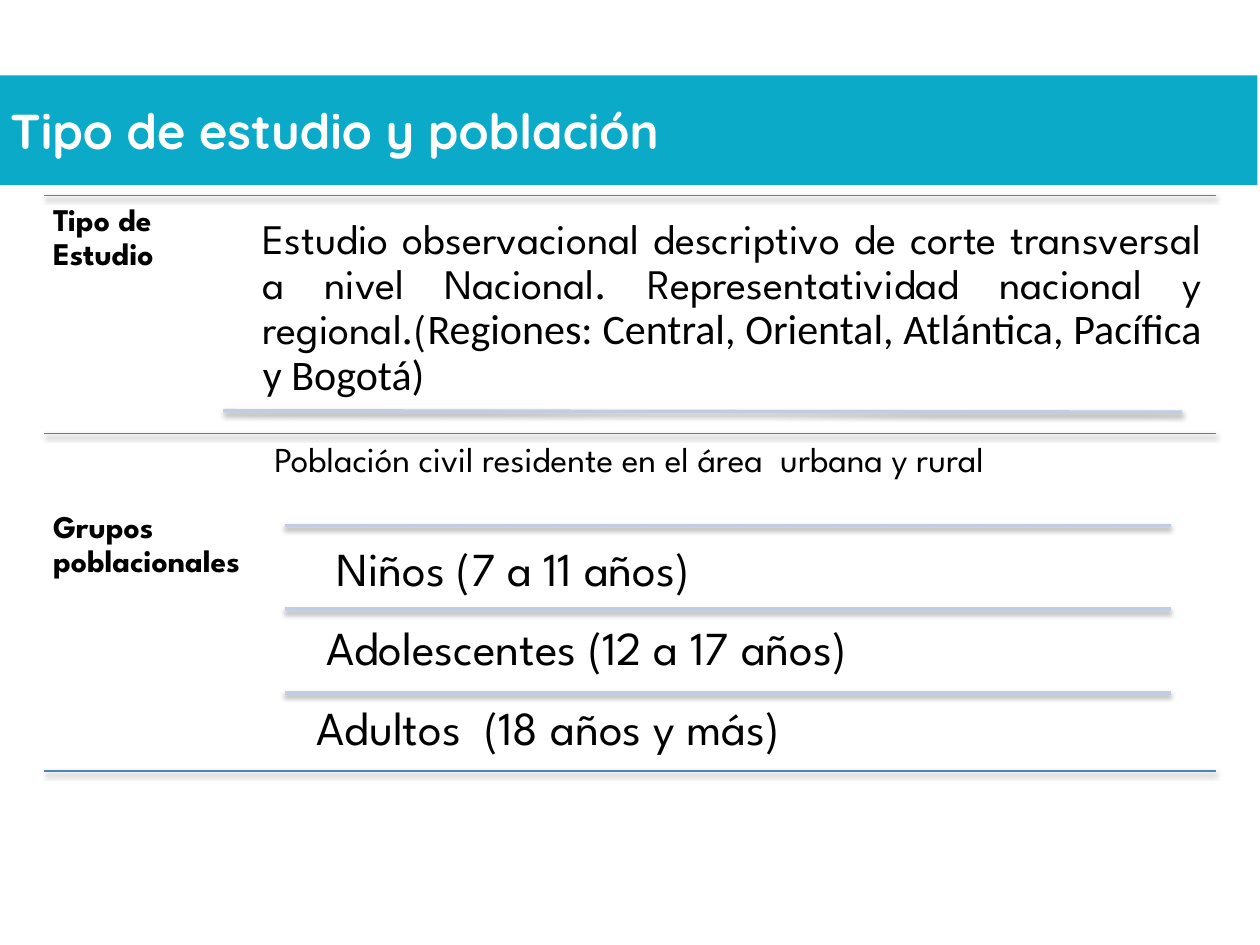
from dataclasses import dataclass

from lxml import etree
from pptx import Presentation
from pptx import util as u
from pptx.dml.color import RGBColor
from pptx.enum import shapes, text
from pptx.oxml.ns import qn


@dataclass(frozen=True)
class Theme:
    band: str = "0AAAC8"
    white: str = "FFFFFF"
    ink: str = "000000"
    blue: str = "4F81BD"
    pale: str = "C2CDE1"
    head: str = "Quicksand"
    body: str = "League Spartan"
    alt: str = "Calibri"
    title: int = 28
    label: int = 18
    study: int = 24
    note: int = 20
    group: int = 27


class Page:
    def __init__(self, deck, theme):
        self.theme = theme
        self.slide = deck.slides.add_slide(deck.slide_layouts[5])

    def run(self, para, words, font, size, color, bold=False):
        run = para.add_run()
        run.text = words
        run.font.name = font
        run.font.size = u.Pt(size)
        run.font.bold = bold
        run.font.color.rgb = RGBColor.from_string(color)

    def title(self, words, box):
        t = self.theme
        shape = self.slide.shapes.title
        shape.left, shape.top, shape.width, shape.height = map(u.Cm, box)
        shape.fill.solid()
        shape.fill.fore_color.rgb = RGBColor.from_string(t.band)
        frame = shape.text_frame
        frame.auto_size = text.MSO_AUTO_SIZE.NONE
        frame.vertical_anchor = text.MSO_ANCHOR.MIDDLE
        para = frame.paragraphs[0]
        para.alignment = text.PP_ALIGN.LEFT
        self.run(para, words, t.head, t.title, t.white, True)

    def text(self, runs, box, size, inset, align=text.PP_ALIGN.LEFT, bold=False):
        frame = self.slide.shapes.add_textbox(*map(u.Cm, box)).text_frame
        frame.word_wrap = True
        frame.margin_left = frame.margin_right = u.Cm(inset)
        frame.margin_top = frame.margin_bottom = u.Cm(inset)
        para = frame.paragraphs[0]
        para.alignment = align
        para.line_spacing = 0.9
        for words, font in runs:
            self.run(para, words, font, size, self.theme.ink, bold)

    def label(self, words, box):
        self.text([(words, self.theme.body)], box, self.theme.label, 0.18, bold=True)

    def rule(self, x, y, end, drop, color, width, dist, alpha):
        line = self.slide.shapes.add_connector(
            shapes.MSO_CONNECTOR.STRAIGHT, *map(u.Cm, (x, y, end, y + drop)))
        line.line.color.rgb = RGBColor.from_string(color)
        line.line.width = u.Pt(width)
        props = line._element.spPr
        effects = etree.SubElement(props, qn("a:effectLst"))
        shade = etree.SubElement(
            effects, qn("a:outerShdw"), blurRad=str(u.Pt(3.1)),
            dist=str(u.Pt(dist)), dir="5400000", rotWithShape="0")
        tint = etree.SubElement(shade, qn("a:srgbClr"), val=self.theme.ink)
        etree.SubElement(tint, qn("a:alpha"), val=str(alpha * 1000))

    def main_rule(self, y):
        self.rule(0.89, y, 24.51, 0, self.theme.blue, 0.75, 1.8, 35)

    def sub_rule(self, x, y, end, drop=0):
        self.rule(x, y, end, drop, self.theme.pale, 2, 1.6, 38)


def main():
    deck = Presentation()
    deck.slide_width, deck.slide_height = u.Cm(25.4), u.Cm(19.05)
    t = Theme()
    page = Page(deck, t)
    page.title("Tipo de estudio y población", (-0.05, 1.52, 25.4, 2.21))

    for y in (3.94, 8.74, 15.54):
        page.main_rule(y)

    page.label("Tipo de Estudio", (0.89, 3.94, 3.86, 5.16))
    page.text(
        [("Estudio observacional descriptivo de corte transversal a nivel Nacional. "
          "Representatividad nacional y regional.(", t.body),
         ("Regiones: Central, Oriental, Atlántica, Pacífica y Bogotá)", t.alt)],
        (5.05, 4.14, 19.43, 2.92), t.study, 0.25, text.PP_ALIGN.JUSTIFY)
    page.sub_rule(4.5, 8.28, 23.83, 0.03)

    page.text([("Población civil residente en el área  urbana y rural", t.body)],
              (0.89, 8.71, 23.6, 1.22), t.note, 0.2, text.PP_ALIGN.CENTER)
    page.label("Grupos poblacionales", (0.89, 10.13, 5.72, 3.33))

    groups = ("Niños (7 a 11 años)", "Adolescentes (12 a 17 años)",
              "Adultos  (18 años y más)")
    for i, words in enumerate(groups):
        page.sub_rule(5.74, 10.59 + 1.69 * i, 23.6)
        page.text([(words, t.body)], (6.5 - 0.2 * i, 10.72 + 1.6 * i, 17.53, 1.63),
                  t.group, 0.28)

    deck.save("out.pptx")


if __name__ == "__main__":
    main()
